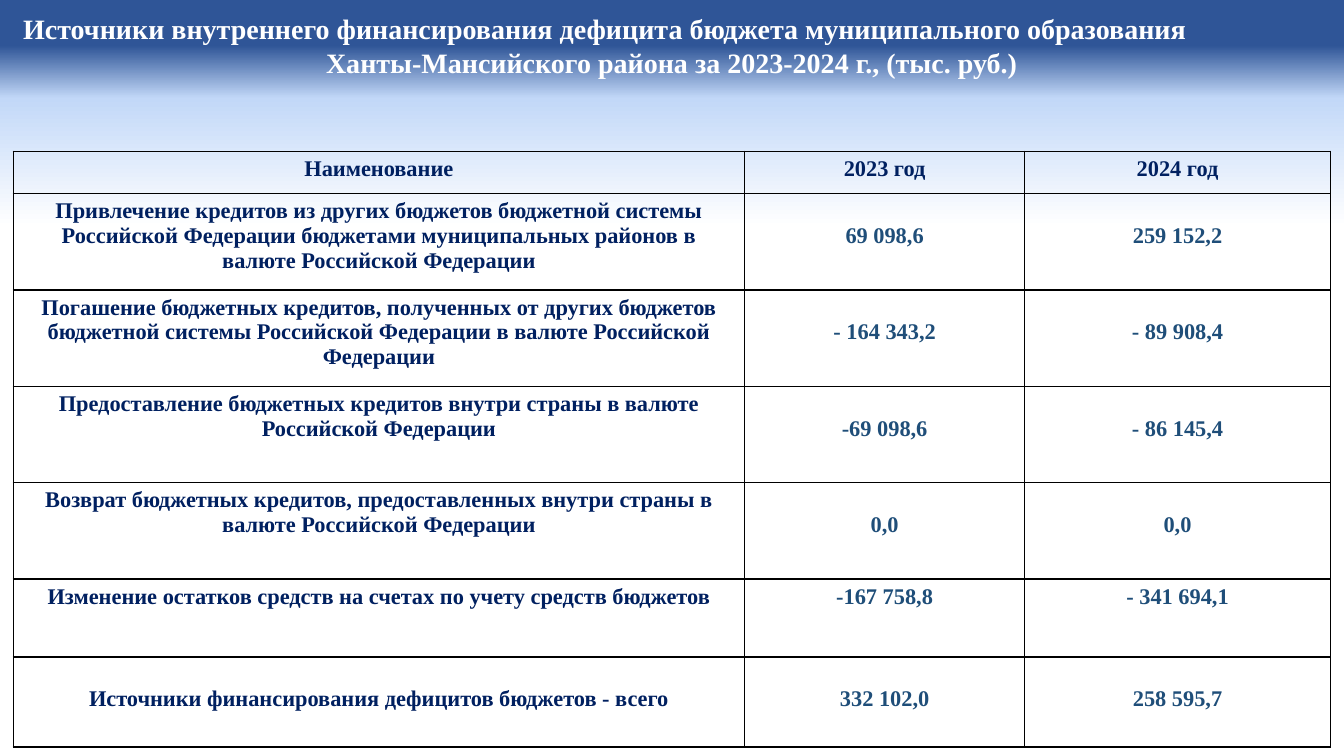
from copy import deepcopy
from dataclasses import dataclass

from lxml.etree import SubElement
from pptx import Presentation
from pptx.dml.color import RGBColor as RGB
from pptx.enum.text import PP_ALIGN as Align
from pptx.oxml.ns import qn
from pptx.util import Pt


@dataclass(frozen=True)
class Theme:
    font: str = "Times New Roman"
    title_size: int = 20
    table_size: int = 16
    title: str = "FFFFFF"
    label: str = "002060"
    value: str = "1F4E79"
    border: str = "000000"
    backdrop: tuple = ((0.06, "2F5597"), (0.13, "C2D8F8"), (0.30, "FFFFFF"))


theme = Theme()


def add_text(paragraph, text, size, color, align):
    paragraph.alignment = align
    run = paragraph.add_run()
    run.text = text
    run.font.name = theme.font
    run.font.size = Pt(size)
    run.font.bold = True
    run.font.color.rgb = RGB.from_string(color)


def add_borders(cell):
    properties = cell._tc.get_or_add_tcPr()
    for position, side in enumerate(("a:lnL", "a:lnR", "a:lnT", "a:lnB")):
        line = properties.makeelement(qn(side), {"w": str(Pt(1))})
        fill = SubElement(line, qn("a:solidFill"))
        SubElement(fill, qn("a:srgbClr"), val=theme.border)
        properties.insert(position, line)


deck = Presentation()
deck.slide_width, deck.slide_height = Pt(960), Pt(540)
slide = deck.slides.add_slide(deck.slide_layouts[6])

backdrop = slide.background.fill
backdrop.gradient()
backdrop.gradient_angle = 270
stop_list = backdrop._fill._gradFill.find(qn("a:gsLst"))
stop_list.append(deepcopy(stop_list[-1]))
for stop, (position, color) in zip(backdrop.gradient_stops, theme.backdrop):
    stop.position = position
    stop.color.rgb = RGB.from_string(color)

heading = slide.shapes.add_textbox(Pt(9.4), Pt(5), Pt(941), Pt(55.4)).text_frame
heading.word_wrap = True
add_text(heading.paragraphs[0],
         "Источники внутреннего финансирования дефицита бюджета муниципального образования",
         theme.title_size, theme.title, Align.LEFT)
add_text(heading.add_paragraph(), "Ханты-Мансийского района за 2023-2024 г., (тыс. руб.)",
         theme.title_size, theme.title, Align.CENTER)

records = [
    ("Наименование", "2023 год", "2024 год"),
    ("Привлечение кредитов из других бюджетов бюджетной системы Российской Федерации "
     "бюджетами муниципальных районов в валюте Российской Федерации",
     "69 098,6", "259 152,2"),
    ("Погашение бюджетных кредитов, полученных от других бюджетов бюджетной системы "
     "Российской Федерации в валюте Российской Федерации",
     "- 164 343,2", "- 89 908,4"),
    ("Предоставление бюджетных кредитов внутри страны в валюте Российской Федерации",
     "-69 098,6", "- 86 145,4"),
    ("Возврат бюджетных кредитов, предоставленных внутри страны в валюте Российской Федерации",
     "0,0", "0,0"),
    ("Изменение остатков средств на счетах по учету средств бюджетов",
     "-167 758,8", "- 341 694,1"),
    ("Источники финансирования дефицитов бюджетов - всего", "332 102,0", "258 595,7"),
]
column_widths = (522.5, 200, 218.5)
row_heights = (30.4, 68.8, 68.8, 68.8, 68.8, 55.7, 64.3)
change_row, total_row = 5, 6

sources = slide.shapes.add_table(
    len(records), len(column_widths), Pt(9.4), Pt(108),
    Pt(sum(column_widths)), Pt(sum(row_heights))).table
for column, width in zip(sources.columns, column_widths):
    column.width = Pt(width)
for row, height in zip(sources.rows, row_heights):
    row.height = Pt(height)

for r, record in enumerate(records):
    for c, text in enumerate(record):
        cell = sources.cell(r, c)
        cell.fill.background()
        add_borders(cell)
        lowered = r == total_row or (c > 0 and 0 < r < change_row)
        cell.margin_top = Pt(21.2 if lowered else 3.6)
        color = theme.value if r > 0 and c > 0 else theme.label
        add_text(cell.text_frame.paragraphs[0], text, theme.table_size, color, Align.CENTER)

deck.save("out.pptx")
